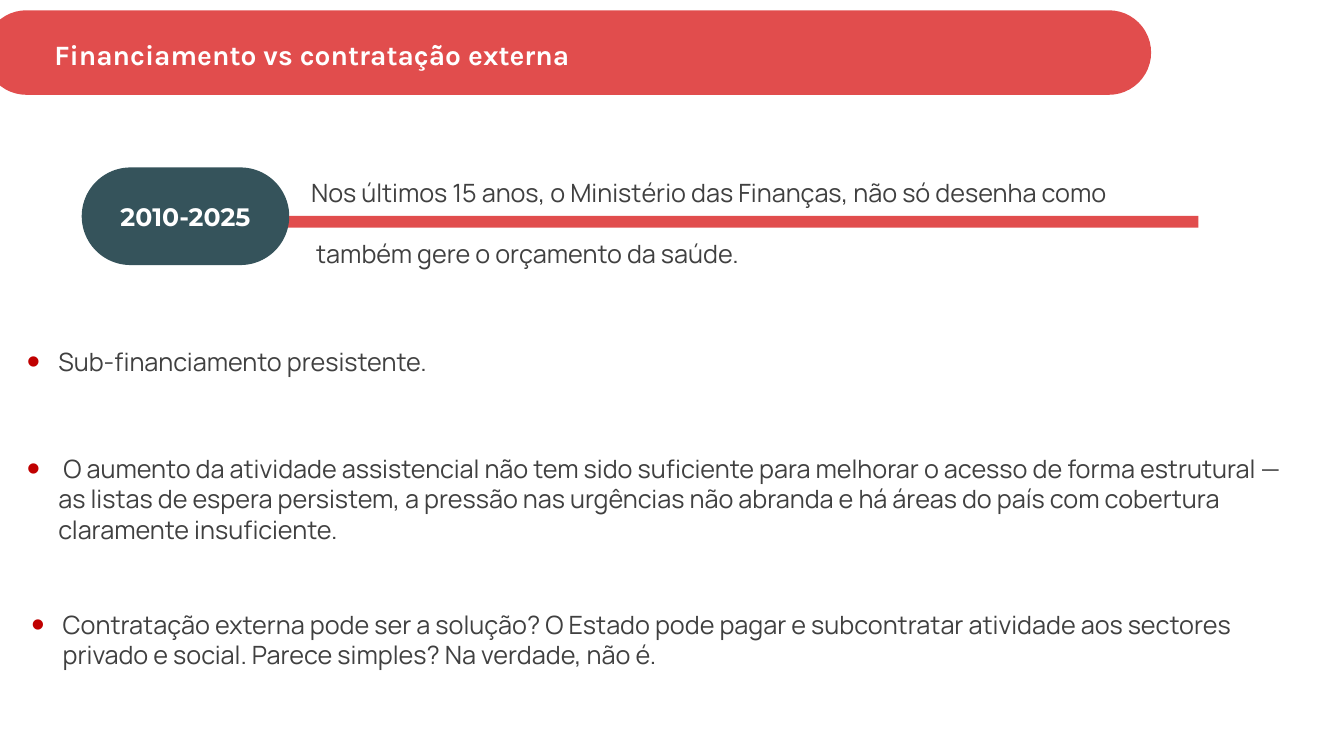
from dataclasses import dataclass
from lxml import etree
from pptx import Presentation
from pptx.dml.color import RGBColor
from pptx.enum import shapes, text
from pptx.oxml.ns import qn
from pptx.util import Cm, Pt

TITLE = "Financiamento vs contratação externa"
YEARS = "2010-2025"
LEAD = [
    ("Nos últimos 15 anos, o Ministério das Finanças, não só desenha como", 0),
    (" também gere o orçamento da saúde.", 21.6),
]
POINTS = [
    ("Sub-financiamento presistente.", 0, 0.79),
    (" O aumento da atividade assistencial não tem sido suficiente para melhorar "
     "o acesso de forma estrutural — as listas de espera persistem, a pressão nas "
     "urgências não abranda e há áreas do país com cobertura claramente insuficiente.",
     54.8, 0.79),
    ("Contratação externa pode ser a solução? O Estado pode pagar e subcontratar "
     "atividade aos sectores privado e social. Parece simples? Na verdade, não é.",
     46.4, 0.9),
]
BOXES = {
    "band": (-0.4, 0.26, 29.41, 2.13),
    "title": (1.12, 0.81, 28.75, 1.12),
    "rule": (4.32, 5.44, 25.88, 0.3),
    "pill": (2.06, 4.22, 5.23, 2.46),
    "lead": (7.59, 4.22, 22.28, 2.9),
    "list": (0.43, 8.48, 32.2, 8.6),
}


@dataclass
class Theme:
    """Colours, fonts and type sizes of the slide."""
    red: str = "E14D4D"
    teal: str = "35535B"
    white: str = "FFFFFF"
    ink: str = "404040"
    dot: str = "C00000"
    head: str = "Karla"
    body: str = "Manrope"
    label: str = "Montserrat"
    big: int = 20
    size: int = 18


def place(shape, name):
    """Move a shape to its box."""
    shape.left, shape.top, shape.width, shape.height = map(Cm, BOXES[name])


def block(slide, kind, name, fill):
    """Add a flat filled shape."""
    shape = slide.shapes.add_shape(kind, *map(Cm, BOXES[name]))
    shape.shadow.inherit = False
    shape.fill.solid()
    shape.fill.fore_color.rgb = RGBColor.from_string(fill)
    shape.line.fill.background()
    if kind == shapes.MSO_SHAPE.ROUNDED_RECTANGLE:
        shape.adjustments[0] = 0.5
    return shape


def frame(shape, anchor, side=0.25, edge=0.25):
    """Set up wrapping, anchor and insets."""
    box = shape.text_frame
    box.word_wrap = True
    box.auto_size = text.MSO_AUTO_SIZE.NONE
    box.vertical_anchor = anchor
    box.margin_left = box.margin_right = Cm(side)
    box.margin_top = box.margin_bottom = Cm(edge)
    return box


def write(par, words, face, size, ink, bold=False, align=text.PP_ALIGN.LEFT, gap=0):
    """Add one styled run to a paragraph."""
    par.alignment = align
    par.space_before = Pt(gap)
    run = par.add_run()
    run.text = words
    run.font.name, run.font.size, run.font.bold = face, Pt(size), bold
    run.font.color.rgb = RGBColor.from_string(ink)


def bullet(par, ink, indent):
    """Give a paragraph a large coloured dot."""
    props = par._p.get_or_add_pPr()
    props.set("marL", str(Cm(indent)))
    props.set("indent", str(-Cm(0.79)))
    tint = etree.SubElement(props, qn("a:buClr"))
    etree.SubElement(tint, qn("a:srgbClr"), val=ink)
    etree.SubElement(props, qn("a:buSzPct"), val="150000")
    etree.SubElement(props, qn("a:buFont"), typeface="Arial")
    etree.SubElement(props, qn("a:buChar"), char="•")


def lines(box, items):
    """Yield a paragraph for each item."""
    for i, item in enumerate(items):
        yield box.add_paragraph() if i else box.paragraphs[0], item


def main():
    """Build the slide and save it."""
    look = Theme()
    deck = Presentation()
    deck.slide_width, deck.slide_height = Cm(33.87), Cm(19.05)
    slide = deck.slides.add_slide(deck.slide_layouts[1])
    title, body = slide.shapes.title, slide.placeholders[1]
    top, mid = text.MSO_ANCHOR.TOP, text.MSO_ANCHOR.MIDDLE
    oval = shapes.MSO_SHAPE.ROUNDED_RECTANGLE

    band = block(slide, oval, "band", look.red)
    title.element.addprevious(band.element)
    place(title, "title")
    write(frame(title, top, edge=0.13).paragraphs[0], TITLE,
          look.head, look.big, look.white, True)

    block(slide, shapes.MSO_SHAPE.RECTANGLE, "rule", look.red)
    pill = block(slide, oval, "pill", look.teal)
    write(frame(pill, mid).paragraphs[0], YEARS, look.label, look.size,
          look.white, True, text.PP_ALIGN.CENTER)

    lead = slide.shapes.add_textbox(*map(Cm, BOXES["lead"]))
    for par, (words, gap) in lines(frame(lead, top), LEAD):
        write(par, words, look.body, look.size, look.ink, gap=gap)

    place(body, "list")
    for par, (words, gap, indent) in lines(frame(body, top), POINTS):
        bullet(par, look.dot, indent)
        write(par, words, look.body, look.size, look.ink, gap=gap)

    deck.save("out.pptx")


if __name__ == "__main__":
    main()
